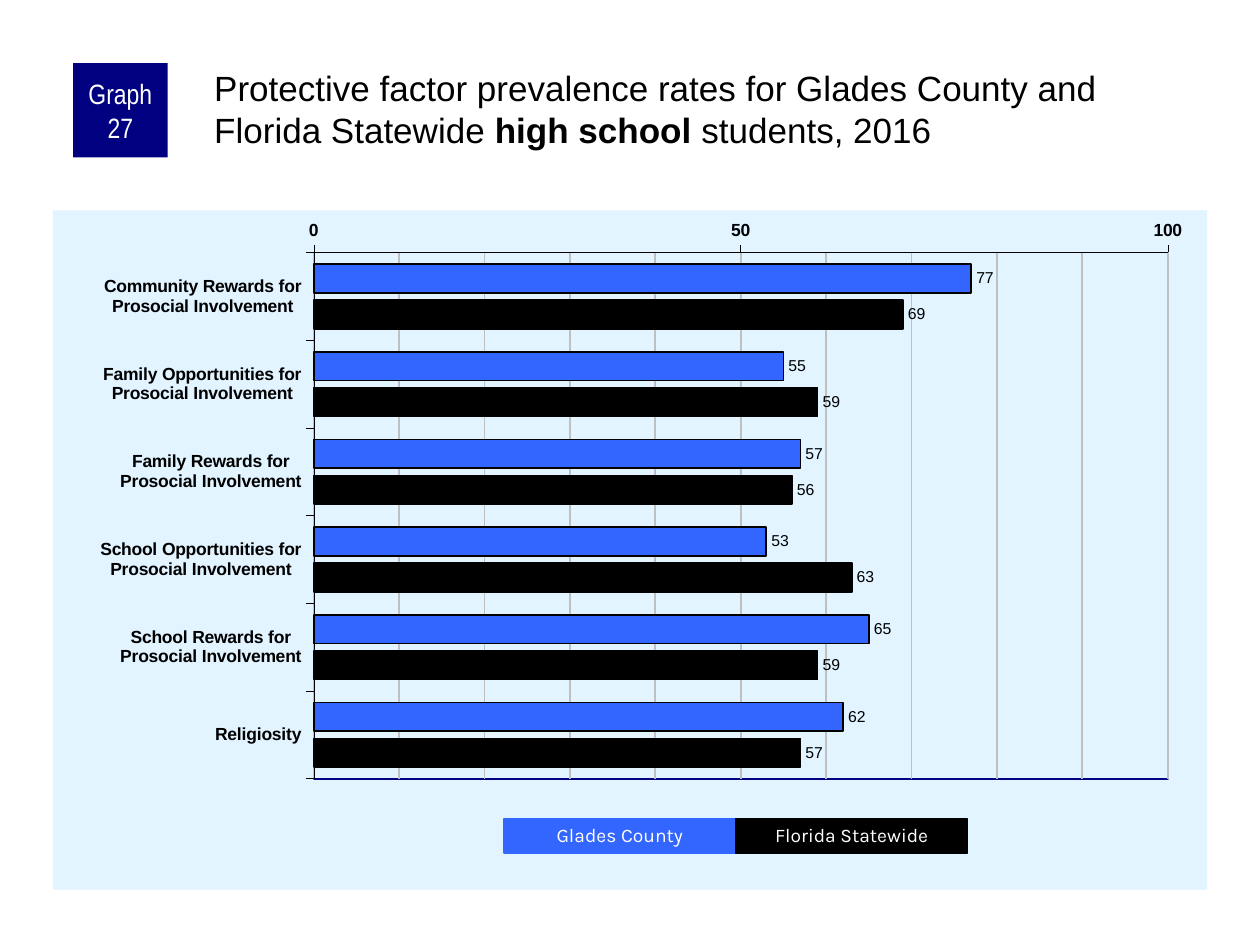
from dataclasses import dataclass

from lxml import etree
from pptx import Presentation
from pptx.chart.data import CategoryChartData
from pptx.dml.color import RGBColor
from pptx.enum import chart as ch, shapes, text
from pptx.oxml import parse_xml
from pptx.oxml.ns import nsdecls, qn
from pptx.util import Inches, Pt

HUES = {"blue": "3366FF", "black": "000000", "navy": "000080",
        "pale": "E1F4FF", "grid": "C0C0C0", "white": "FFFFFF"}


@dataclass
class Series:
    name: str
    hue: str
    rates: tuple


@dataclass
class Box:
    label: str
    left: float
    top: float
    width: float
    height: float
    fill: str
    font: str
    size: float


FACTORS = [f"{kind} for\nProsocial Involvement" for kind in (
    "Community Rewards", "Family Opportunities", "Family Rewards",
    "School Opportunities", "School Rewards")] + ["Religiosity"]
GROUPS = [
    Series("Glades County", "blue", (77, 55, 57, 53, 65, 62)),
    Series("Florida Statewide", "black", (69, 59, 56, 63, 59, 57)),
]


def rgb(hue: str) -> RGBColor:
    return RGBColor.from_string(HUES[hue])


def style(font, name: str, size: float, hue: str, bold: bool = False) -> None:
    font.name, font.size, font.bold = name, Pt(size), bold
    font.color.rgb = rgb(hue)


def stroke(line, hue: str, width: float) -> None:
    line.color.rgb = rgb(hue)
    line.width = Pt(width)


def add_title(slide) -> None:
    title = slide.shapes.title
    title.left, title.top = Inches(1.67), Inches(0.5)
    title.width, title.height = Inches(7.92), Inches(0.83)
    frame = title.text_frame
    frame.word_wrap = True
    frame.auto_size = text.MSO_AUTO_SIZE.NONE
    frame.vertical_anchor = text.MSO_ANCHOR.TOP
    frame.margin_left = frame.margin_top = Inches(0.03)
    frame.margin_right = frame.margin_bottom = 0
    para = frame.paragraphs[0]
    para.alignment = text.PP_ALIGN.LEFT
    para.line_spacing = 1.0
    para.space_before = Pt(0)
    for words, bold in (
            ("Protective factor prevalence rates for Glades County and "
             "Florida Statewide ", False),
            ("high school ", True), ("students, 2016", False)):
        run = para.add_run()
        run.text = words
        style(run.font, "Arial", 20, "black", bold)


def add_box(slide, box: Box):
    shape = slide.shapes.add_shape(
        shapes.MSO_SHAPE.RECTANGLE, Inches(box.left), Inches(box.top),
        Inches(box.width), Inches(box.height))
    shape.shadow.inherit = False
    shape.fill.solid()
    shape.fill.fore_color.rgb = rgb(box.fill)
    shape.line.fill.background()
    frame = shape.text_frame
    frame.word_wrap = True
    frame.vertical_anchor = text.MSO_ANCHOR.MIDDLE
    frame.margin_left = frame.margin_right = Inches(0.05)
    frame.margin_top = frame.margin_bottom = 0
    para = frame.paragraphs[0]
    para.alignment = text.PP_ALIGN.CENTER
    run = para.add_run()
    run.text = box.label
    style(run.font, box.font, box.size, "white")
    return shape


def style_axis(axis) -> None:
    style(axis.tick_labels.font, "Arial", 10, "black", True)
    axis.major_tick_mark = ch.XL_TICK_MARK.OUTSIDE
    axis.minor_tick_mark = ch.XL_TICK_MARK.NONE
    stroke(axis.format.line, "black", 0.25)


def set_areas(chart) -> None:
    """Place the plot; fill the chart area and outline the plot area."""
    root = chart.element
    plot = root.find(".//" + qn("c:plotArea"))
    old = plot.find(qn("c:layout"))
    if old is not None:
        plot.remove(old)
    layout = parse_xml(f"<c:layout {nsdecls('c')}/>")
    manual = etree.SubElement(layout, qn("c:manualLayout"))
    for tag, val in (("layoutTarget", "inner"), ("xMode", "edge"),
                     ("yMode", "edge"), ("x", "0.226"), ("y", "0.062"),
                     ("w", "0.74"), ("h", "0.775")):
        etree.SubElement(manual, qn("c:" + tag)).set("val", val)
    plot.insert(0, layout)

    def area(inner: str):
        return parse_xml(f"<c:spPr {nsdecls('c', 'a')}>{inner}</c:spPr>")

    def solid(hue: str) -> str:
        return f'<a:solidFill><a:srgbClr val="{HUES[hue]}"/></a:solidFill>'

    plot.append(area(f'<a:noFill/><a:ln w="12700">{solid("navy")}</a:ln>'))
    root.find(qn("c:chart")).addnext(
        area(solid("pale") + "<a:ln><a:noFill/></a:ln>"))


def add_rates(slide) -> None:
    data = CategoryChartData()
    data.categories = FACTORS
    for group in GROUPS:
        data.add_series(group.name, group.rates)
    chart = slide.shapes.add_chart(
        ch.XL_CHART_TYPE.BAR_CLUSTERED, Inches(0.42), Inches(1.67),
        Inches(9.16), Inches(5.39), data).chart
    chart.has_legend = chart.has_title = False
    style(chart.font, "Arial", 11.8, "black")

    # Axes
    cats, vals = chart.category_axis, chart.value_axis
    style_axis(cats)
    style_axis(vals)
    cats.reverse_order = True
    cats.crosses = ch.XL_AXIS_CROSSES.MAXIMUM
    vals.minimum_scale, vals.maximum_scale = 0, 100
    vals.major_unit, vals.minor_unit = 50, 10
    vals.has_major_gridlines = vals.has_minor_gridlines = True
    stroke(vals.major_gridlines.format.line, "grid", 1)
    minor = parse_xml(
        f'<c:spPr {nsdecls("c", "a")}><a:ln w="12700"><a:solidFill>'
        f'<a:srgbClr val="{HUES["grid"]}"/></a:solidFill></a:ln></c:spPr>')
    chart.element.find(".//" + qn("c:minorGridlines")).append(minor)

    # Bars
    plot = chart.plots[0]
    plot.gap_width, plot.overlap = 80, -25
    plot.vary_by_categories = False
    for bars, group in zip(plot.series, GROUPS):
        bars.invert_if_negative = False
        bars.format.fill.solid()
        bars.format.fill.fore_color.rgb = rgb(group.hue)
        stroke(bars.format.line, "black", 1)
        labels = bars.data_labels
        labels.show_value = True
        labels.position = ch.XL_LABEL_POSITION.OUTSIDE_END
        style(labels.font, "Arial", 9, "black")
    set_areas(chart)


def add_key(slide) -> None:
    width = 1.84
    for i, group in enumerate(GROUPS):
        key = add_box(slide, Box(group.name, 4 + i * width, 6.5, width, 0.27,
                                 group.hue, "Karla", 11))
        stroke(key.line, group.hue, 0.75)
        key.text_frame.paragraphs[0].line_spacing = 0.9


def main() -> None:
    deck = Presentation()
    deck.slide_width, deck.slide_height = Inches(10), Inches(7.5)
    slide = deck.slides.add_slide(deck.slide_layouts[5])
    add_rates(slide)
    add_box(slide, Box("Graph 27", 0.58, 0.5, 0.75, 0.75,
                       "navy", "Arial Narrow", 16))
    add_title(slide)
    add_key(slide)
    deck.save("out.pptx")


if __name__ == "__main__":
    main()
